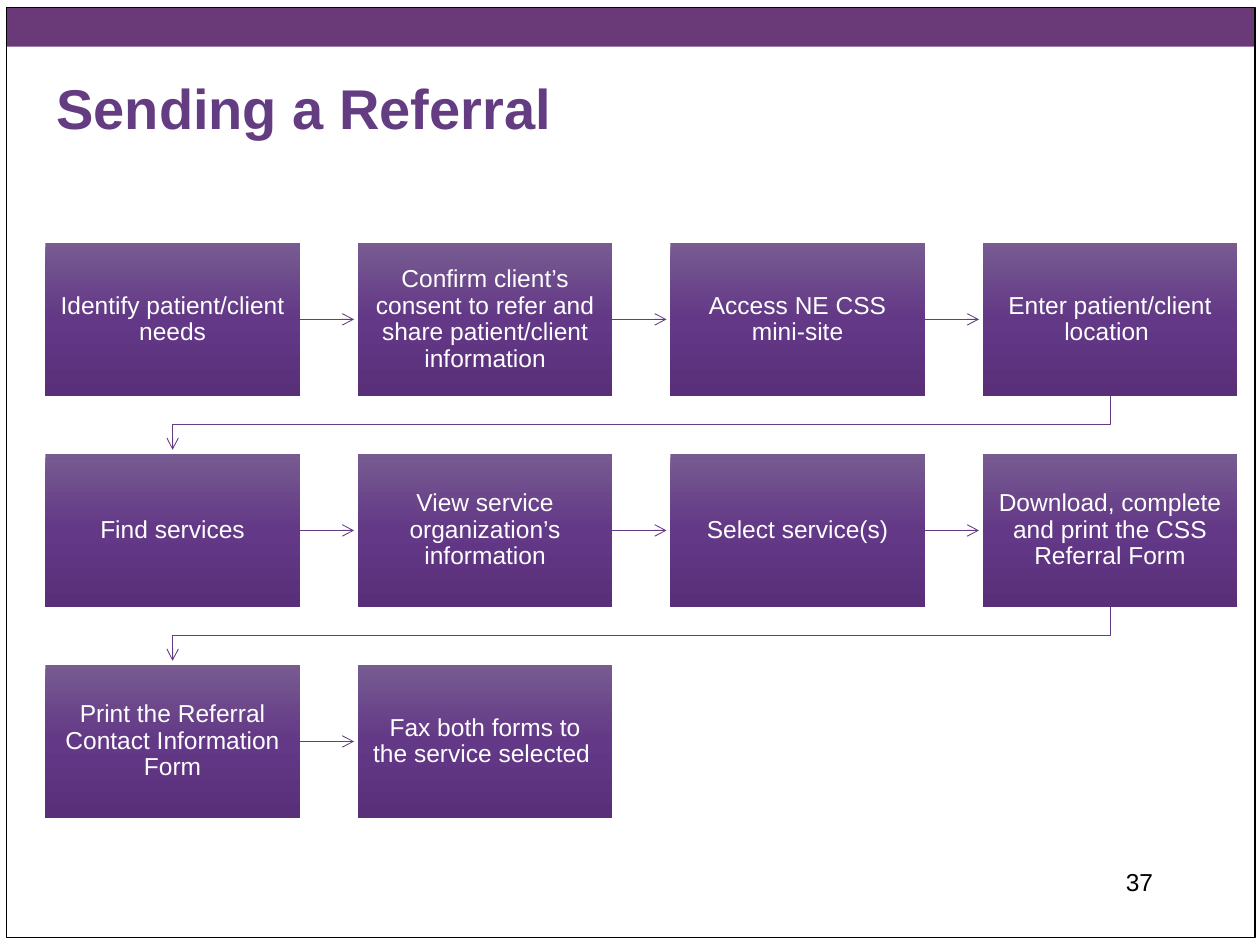
from copy import deepcopy

from lxml.etree import SubElement
from pptx import Presentation
from pptx.dml.color import RGBColor
from pptx.enum.shapes import MSO_CONNECTOR, MSO_SHAPE
from pptx.enum.text import MSO_ANCHOR, PP_ALIGN
from pptx.oxml.ns import qn
from pptx.util import Inches, Pt

COLORS = {
    "band": "693A77",
    "accent": "633C82",
    "top": "775B91",
    "middle": "633886",
    "bottom": "592F7A",
    "white": "FFFFFF",
    "black": "000000",
}
STEPS = [
    "Identify patient/client needs",
    "Confirm client’s consent to refer and share patient/client information",
    "Access NE CSS mini-site",
    "Enter patient/client location ",
    "Find services",
    "View service organization’s information",
    "Select service(s)",
    "Download, complete and print the CSS Referral Form",
    "Print the Referral Contact Information Form",
    "Fax both forms to the service selected ",
]
COLUMNS = 4
LEFT, TOP = 0.36, 1.93
WIDTH, HEIGHT = 2.02, 1.21
STEP_X, STEP_Y = 2.48, 1.675
ARROW_LENGTH = 0.43
ELBOW_DROP = 0.23


def color(name):
    return RGBColor.from_string(COLORS[name])


def write_text(shape, text, size=14, ink="black", bold=False, align=PP_ALIGN.LEFT,
               anchor=MSO_ANCHOR.TOP, spacing=1.0, inset=None):
    frame = shape.text_frame
    frame.word_wrap = True
    frame.vertical_anchor = anchor
    if inset is not None:
        frame.margin_left = frame.margin_right = Inches(inset)
        frame.margin_top = frame.margin_bottom = Inches(inset)
    paragraph = frame.paragraphs[0]
    paragraph.alignment = align
    paragraph.line_spacing = spacing
    run = paragraph.add_run()
    run.text = text
    run.font.name = "Arial"
    run.font.size = Pt(size)
    run.font.bold = bold
    run.font.color.rgb = color(ink)


class SlideBuilder:
    def __init__(self, slide, line_color="accent", line_width=0.5):
        self.slide = slide
        self.line_color = line_color
        self.line_width = line_width

    def rectangle(self, left, top, width, height, fill=None, line=None):
        shape = self.slide.shapes.add_shape(
            MSO_SHAPE.RECTANGLE, Inches(left), Inches(top), Inches(width), Inches(height))
        shape.shadow.inherit = False
        if fill:
            shape.fill.solid()
            shape.fill.fore_color.rgb = color(fill)
        else:
            shape.fill.background()
        if line:
            shape.line.color.rgb = color(line)
            shape.line.width = Pt(0.75)
        else:
            shape.line.fill.background()
        return shape

    def text_box(self, left, top, width, height, text, **style):
        shape = self.slide.shapes.add_textbox(
            Inches(left), Inches(top), Inches(width), Inches(height))
        write_text(shape, text, **style)

    def step_box(self, left, top, text):
        shape = self.rectangle(left, top, WIDTH, HEIGHT)
        shape.fill.gradient()
        shape.fill.gradient_angle = 270
        stop_list = shape.element.spPr.find(qn("a:gradFill")).find(qn("a:gsLst"))
        stop_list.insert(1, deepcopy(stop_list[0]))
        for index, name in enumerate(("top", "middle", "bottom")):
            stop = shape.fill.gradient_stops[index]
            stop.position = index / 2
            stop.color.rgb = color(name)
        write_text(shape, text, ink="white", align=PP_ALIGN.CENTER,
                   anchor=MSO_ANCHOR.MIDDLE, spacing=0.9, inset=0.11)

    def style_arrow(self, shape):
        shape.line.color.rgb = color(self.line_color)
        shape.line.width = Pt(self.line_width)
        SubElement(shape.line._get_or_add_ln(), qn("a:tailEnd"), type="arrow")

    def arrow(self, left, middle):
        connector = self.slide.shapes.add_connector(
            MSO_CONNECTOR.STRAIGHT, Inches(left), Inches(middle),
            Inches(left + ARROW_LENGTH), Inches(middle))
        self.style_arrow(connector)
        SubElement(connector.element.spPr, qn("a:effectLst"))

    def elbow_arrow(self, start_x, start_y, end_x):
        turn_y = start_y + ELBOW_DROP
        points = [(start_x, turn_y), (end_x, turn_y), (end_x, start_y + ARROW_LENGTH)]
        builder = self.slide.shapes.build_freeform(Inches(start_x), Inches(start_y))
        builder.add_line_segments([(Inches(x), Inches(y)) for x, y in points], close=False)
        shape = builder.convert_to_shape()
        shape.shadow.inherit = False
        shape.fill.background()
        self.style_arrow(shape)


def main():
    presentation = Presentation()
    presentation.slide_width = Inches(10)
    presentation.slide_height = Inches(7.5)
    builder = SlideBuilder(presentation.slides.add_slide(presentation.slide_layouts[6]))

    builder.rectangle(0.05, 0.06, 9.91, 0.31, fill="band")
    builder.rectangle(0.05, 0.06, 9.91, 7.38, line="black")
    builder.text_box(0.35, 0.17, 8.5, 1, "Sending a Referral", size=32, ink="accent",
                     bold=True, anchor=MSO_ANCHOR.BOTTOM)

    for index, text in enumerate(STEPS):
        row, column = divmod(index, COLUMNS)
        left = LEFT + column * STEP_X
        top = TOP + row * STEP_Y
        if index < len(STEPS) - 1:
            if column < COLUMNS - 1:
                builder.arrow(left + WIDTH, top + HEIGHT / 2)
            else:
                builder.elbow_arrow(left + WIDTH / 2, top + HEIGHT, LEFT + WIDTH / 2)
        builder.step_box(left, top, text)

    builder.text_box(7.17, 6.83, 2.08, 0.5, "37", align=PP_ALIGN.RIGHT)
    presentation.save("out.pptx")


if __name__ == "__main__":
    main()
